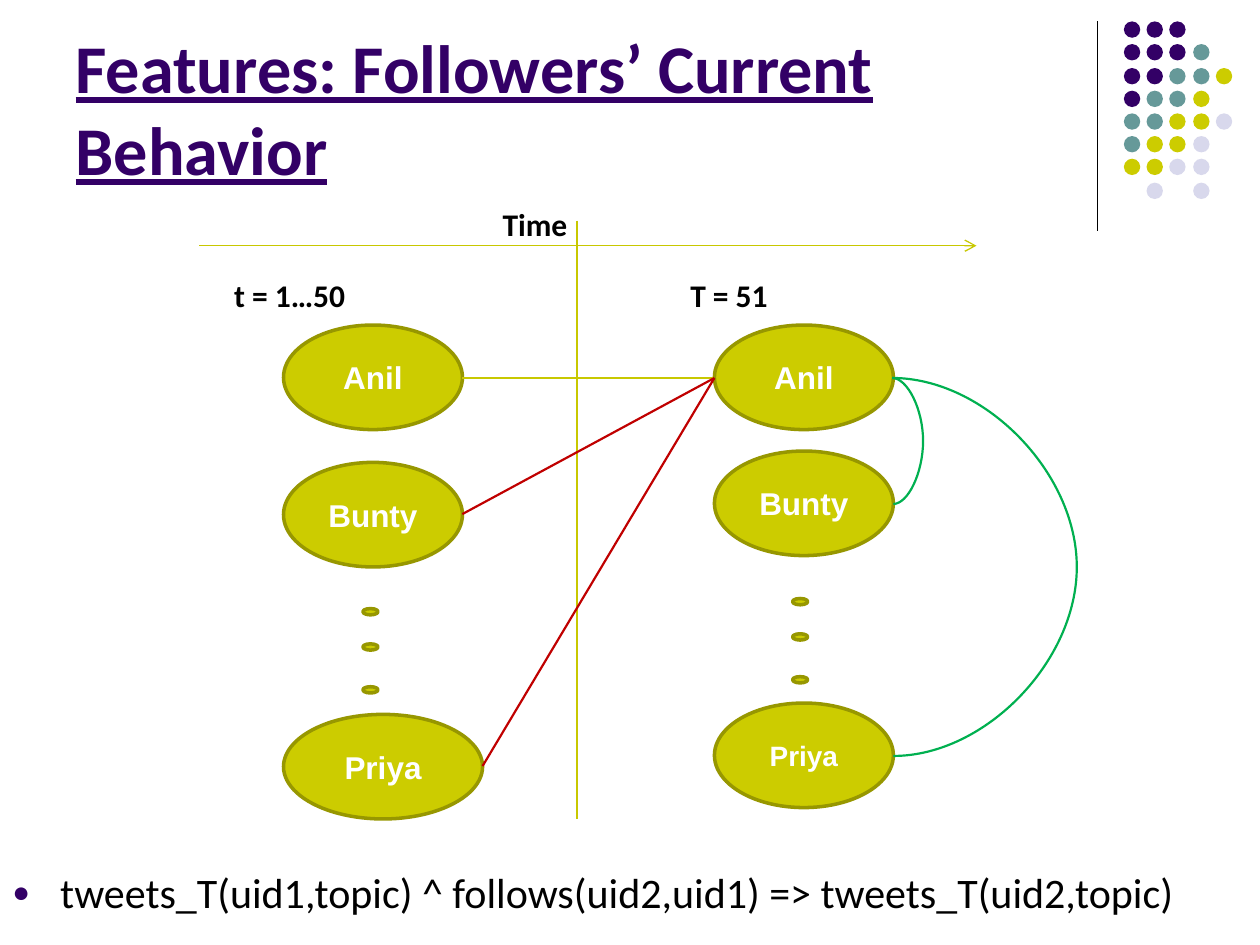
from lxml.etree import SubElement
from pptx import Presentation
from pptx.dml.color import RGBColor
from pptx.enum.shapes import MSO_CONNECTOR, MSO_SHAPE
from pptx.enum.text import MSO_ANCHOR, MSO_AUTO_SIZE, PP_ALIGN
from pptx.oxml.ns import qn
from pptx.util import Pt

PX = 9144  # 100 px to the inch
BLACK = RGBColor(0x00, 0x00, 0x00)
WHITE = RGBColor(0xFF, 0xFF, 0xFF)
PURPLE = RGBColor(0x33, 0x00, 0x66)
TEAL = RGBColor(0x66, 0x99, 0x99)
LIME = RGBColor(0xCC, 0xCC, 0x00)
PALE = RGBColor(0xD8, 0xD8, 0xEC)
OLIVE = RGBColor(0x97, 0x97, 0x00)
MOSS = RGBColor(0xC8, 0xC8, 0x00)
RED = RGBColor(0xC0, 0x00, 0x00)
GREEN = RGBColor(0x00, 0xB0, 0x50)

deck = Presentation()
deck.slide_width, deck.slide_height = 1000 * PX, 750 * PX
slide = deck.slides.add_slide(deck.slide_layouts[5])
shapes = slide.shapes


def add_line(x1, y1, x2, y2, color, width, kind=MSO_CONNECTOR.STRAIGHT):
    line = shapes.add_connector(kind, x1 * PX, y1 * PX, x2 * PX, y2 * PX)
    line.line.color.rgb = color
    line.line.width = Pt(width)
    SubElement(line._element.spPr, qn("a:effectLst"))
    return line


def add_run(para, text, size, font, color, bold=True):
    run = para.add_run()
    run.text = text
    run.font.size = Pt(size)
    run.font.name = font
    run.font.bold = bold
    run.font.color.rgb = color
    return run


# Corner ornament: one letter per dot
add_line(871, 17, 871, 183, BLACK, 0.75)
tints = {"P": PURPLE, "T": TEAL, "L": LIME, "W": PALE}
rows = ["PPP", "PPPT", "PPTTL", "PTTL", "TTLLW", "TLLW", "LLWW", " W W"]
group = shapes.add_group_shape()
for r, row in enumerate(rows):
    for c, key in enumerate(row):
        if key in tints:
            x, y = round(892 + 18.25 * c), round(17 + 18.25 * r)
            dot = group.shapes.add_shape(
                MSO_SHAPE.OVAL, x * PX, y * PX, 13 * PX, 13 * PX)
            dot.shadow.inherit = False
            dot.fill.solid()
            dot.fill.fore_color.rgb = tints[key]
            dot.line.fill.background()

# Title
title = shapes.title
title.left, title.top = 50 * PX, 13 * PX
title.width, title.height = 825 * PX, 142 * PX
frame = title.text_frame
frame.auto_size = MSO_AUTO_SIZE.NONE
frame.vertical_anchor = MSO_ANCHOR.BOTTOM
para = frame.paragraphs[0]
para.alignment = PP_ALIGN.LEFT
run = add_run(para, "Features: Followers’ Current Behavior", 39, "Calibri", PURPLE)
run.font.underline = True

# Users on both sides of the time divide, with small ovals as ellipsis
ovals = [
    ("Anil", 225, 258, 142, 83, 18),
    ("Bunty", 225, 367, 142, 83, 18),
    ("Priya", 225, 567, 158, 83, 18),
    ("Anil", 567, 258, 142, 83, 18),
    ("Bunty", 567, 358, 142, 83, 18),
    ("Priya", 567, 558, 142, 83, 16),
]
for x, top in ((288, 483), (629, 475)):
    ovals += [("", x, top + gap, 12, 5, 18) for gap in (0, 28, 62)]
for name, x, y, w, h, size in ovals:
    oval = shapes.add_shape(MSO_SHAPE.OVAL, x * PX, y * PX, w * PX, h * PX)
    oval.shadow.inherit = False
    oval.fill.solid()
    oval.fill.fore_color.rgb = LIME
    oval.line.color.rgb = OLIVE
    oval.line.width = Pt(2)
    if name:
        frame = oval.text_frame
        frame.vertical_anchor = MSO_ANCHOR.MIDDLE
        para = frame.paragraphs[0]
        para.alignment = PP_ALIGN.CENTER
        add_run(para, name, size, "Arial", WHITE)

# Divide, time axis and links into Anil
add_line(458, 175, 458, 650, MOSS, 0.75)
axis = add_line(158, 195, 775, 195, MOSS, 0.75)
SubElement(axis.line._get_or_add_ln(), qn("a:tailEnd"), type="arrow")
for x, y, color in ((367, 300, MOSS), (367, 408, RED), (383, 608, RED)):
    add_line(x, y, 567, 300, color, 1.25)

# Curves from Anil; the bulge is a multiple of the 1 px width
for y, bulge in ((400, 25), (600, 149)):
    curve = add_line(708, 300, 709, y, GREEN, 1.25, MSO_CONNECTOR.CURVE)
    guides = curve._element.spPr.find(qn("a:prstGeom")).get_or_add_avLst()
    SubElement(guides, qn("a:gd"), name="adj1", fmla=f"val {bulge * 100000}")

# Labels and rule
labels = [
    ("T = 51", 538, 214, 242, 40, 18, True),
    ("t = 1…50", 176, 214, 317, 40, 18, True),
    ("Time", 389, 158, 92, 40, 18, True),
    ("tweets_T(uid1,topic) ^ follows(uid2,uid1) => tweets_T(uid2,topic)",
     0, 683, 1000, 51, 24, False),
]
for text, x, y, w, h, size, bold in labels:
    box = shapes.add_textbox(x * PX, y * PX, w * PX, h * PX)
    box.text_frame.word_wrap = True
    para = box.text_frame.paragraphs[0]
    add_run(para, text, size, "Calibri", BLACK, bold)

# Bullet on the rule, the last label
para.space_before = Pt(4.8)
props = para._p.get_or_add_pPr()
props.set("marL", str(38 * PX))
props.set("indent", str(-38 * PX))
tint = SubElement(props, qn("a:buClr"))
SubElement(tint, qn("a:srgbClr"), val=str(PURPLE))
SubElement(props, qn("a:buSzPct"), val="70000")
SubElement(props, qn("a:buFont"), typeface="Arial")
SubElement(props, qn("a:buChar"), char="●")

deck.save("out.pptx")
